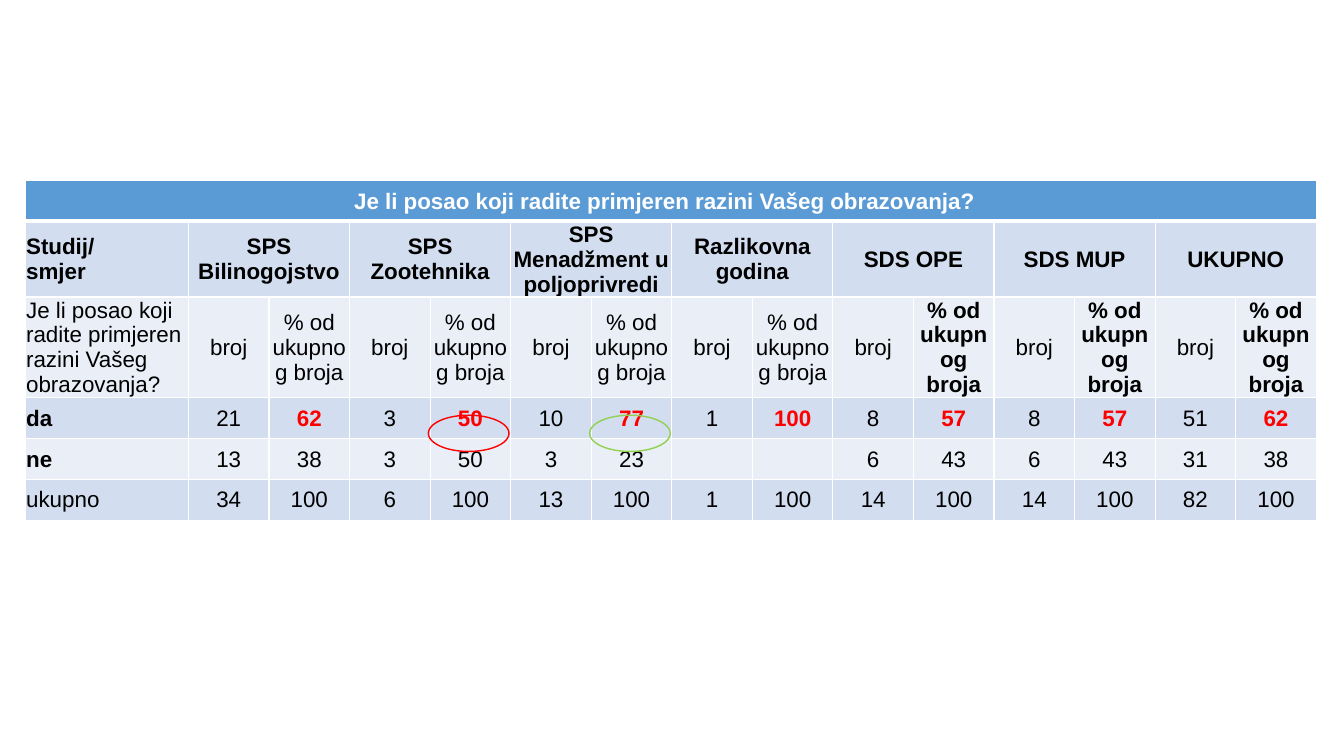
from lxml import etree
from pptx import Presentation
from pptx.dml.color import RGBColor
from pptx.enum.shapes import MSO_SHAPE
from pptx.enum.text import MSO_ANCHOR, PP_ALIGN
from pptx.oxml.ns import qn
from pptx.util import Pt

OVAL = MSO_SHAPE.OVAL
MIDDLE = MSO_ANCHOR.MIDDLE
LEFT, CENTER = PP_ALIGN.LEFT, PP_ALIGN.CENTER

WHITE = RGBColor(0xFF, 0xFF, 0xFF)
BLACK = RGBColor(0x00, 0x00, 0x00)
RED = RGBColor(0xFF, 0x00, 0x00)
GREEN = RGBColor(0x92, 0xD0, 0x50)
HEADER = RGBColor(0x5B, 0x9B, 0xD5)
BAND_DARK = RGBColor(0xD2, 0xDE, 0xEF)
BAND_LIGHT = RGBColor(0xEA, 0xEF, 0xF7)

QUESTION = "Je li posao koji radite primjeren razini Vašeg obrazovanja? "
STUDIES = ["SPS Bilinogojstvo", "SPS Zootehnika", "SPS Menadžment u poljoprivredi",
           "Razlikovna godina", "SDS OPE", "SDS MUP", "UKUPNO"]
MEASURES = ["broj", "% od ukupnog broja"]
ANSWERS = [
    ("da", 21, 62, 3, 50, 10, 77, 1, 100, 8, 57, 8, 57, 51, 62),
    ("ne", 13, 38, 3, 50, 3, 23, "", "", 6, 43, 6, 43, 31, 38),
    ("ukupno", 34, 100, 6, 100, 13, 100, 1, 100, 14, 100, 14, 100, 82, 100),
]
RINGS = [(421.2, GREEN), (306, RED)]

TABLE_LEFT, TABLE_TOP, TABLE_HEIGHT = 18, 128.9, 252.7
LABEL_W, VALUE_W, ROW_H = 116.6, 57.55, 29.2
RING_TOP, RING_W, RING_H = 296.6, 57.6, 25.9
MARGINS = {"margin_left": Pt(0.7), "margin_right": Pt(0.7),
           "margin_top": Pt(0.7), "margin_bottom": Pt(0), "vertical_anchor": MIDDLE}


def set_borders(cell, row):
    pr = cell._tc.get_or_add_tcPr()
    widths = {"a:lnL": 1, "a:lnR": 1, "a:lnT": 3 if row == 1 else 1, "a:lnB": 3 if row == 0 else 1}
    for i, (tag, width) in enumerate(widths.items()):
        ln = etree.Element(qn(tag), w=str(Pt(width)))
        fill = etree.SubElement(ln, qn("a:solidFill"))
        etree.SubElement(fill, qn("a:srgbClr"), val=str(WHITE))
        pr.insert(i, ln)


def text_format(row, col):
    bold = (row < 2 or (row == 2 and col >= 10 and col % 2 == 0)
            or (row == 3 and col % 2 == 0) or (row == 4 and col == 0))
    color = WHITE if row == 0 else RED if row == 3 and col and col % 2 == 0 else BLACK
    return {"name": "Arial", "size": Pt(16), "bold": bold}, color


def fill_cell(cell, text, row, col):
    for name, value in MARGINS.items():
        setattr(cell, name, value)
    cell.fill.solid()
    cell.fill.fore_color.rgb = HEADER if row == 0 else BAND_DARK if row % 2 else BAND_LIGHT
    set_borders(cell, row)
    tf = cell.text_frame
    tf.text = str(text)
    font_format, color = text_format(row, col)
    for p in tf.paragraphs:
        p.alignment = CENTER if row == 0 or col else LEFT
        for r in p.runs:
            for name, value in font_format.items():
                setattr(r.font, name, value)
            r.font.color.rgb = color


def add_survey_table(slide):
    study_row = ["Studij/\nsmjer"]
    for study in STUDIES:
        study_row += [study, ""]
    cols = len(study_row)
    rows = [[QUESTION + " "] + [""] * (cols - 1), study_row,
            [QUESTION] + MEASURES * len(STUDIES), *ANSWERS]
    frame = slide.shapes.add_table(len(rows), cols, Pt(TABLE_LEFT), Pt(TABLE_TOP),
                                   Pt(LABEL_W + VALUE_W * (cols - 1)), Pt(ROW_H * len(rows)))
    table = frame.table
    for col, column in enumerate(table.columns):
        column.width = Pt(VALUE_W if col else LABEL_W)
    for row, values in enumerate(rows):
        table.rows[row].height = Pt(ROW_H)
        for col, text in enumerate(values):
            fill_cell(table.cell(row, col), text, row, col)
    table.cell(0, 0).merge(table.cell(0, cols - 1))
    for col in range(1, cols, 2):
        table.cell(1, col).merge(table.cell(1, col + 1))
    frame.height = Pt(TABLE_HEIGHT)


def add_ring(slide, left, color):
    sp = slide.shapes.add_shape(OVAL, Pt(left), Pt(RING_TOP), Pt(RING_W), Pt(RING_H))
    sp.shadow.inherit = False
    sp.fill.background()
    sp.line.color.rgb = color
    sp.line.width = Pt(1)


def main():
    prs = Presentation()
    prs.slide_width, prs.slide_height = Pt(960), Pt(540)
    slide = prs.slides.add_slide(prs.slide_layouts[6])
    add_survey_table(slide)
    for left, color in RINGS:
        add_ring(slide, left, color)
    prs.save("out.pptx")


if __name__ == "__main__":
    main()
